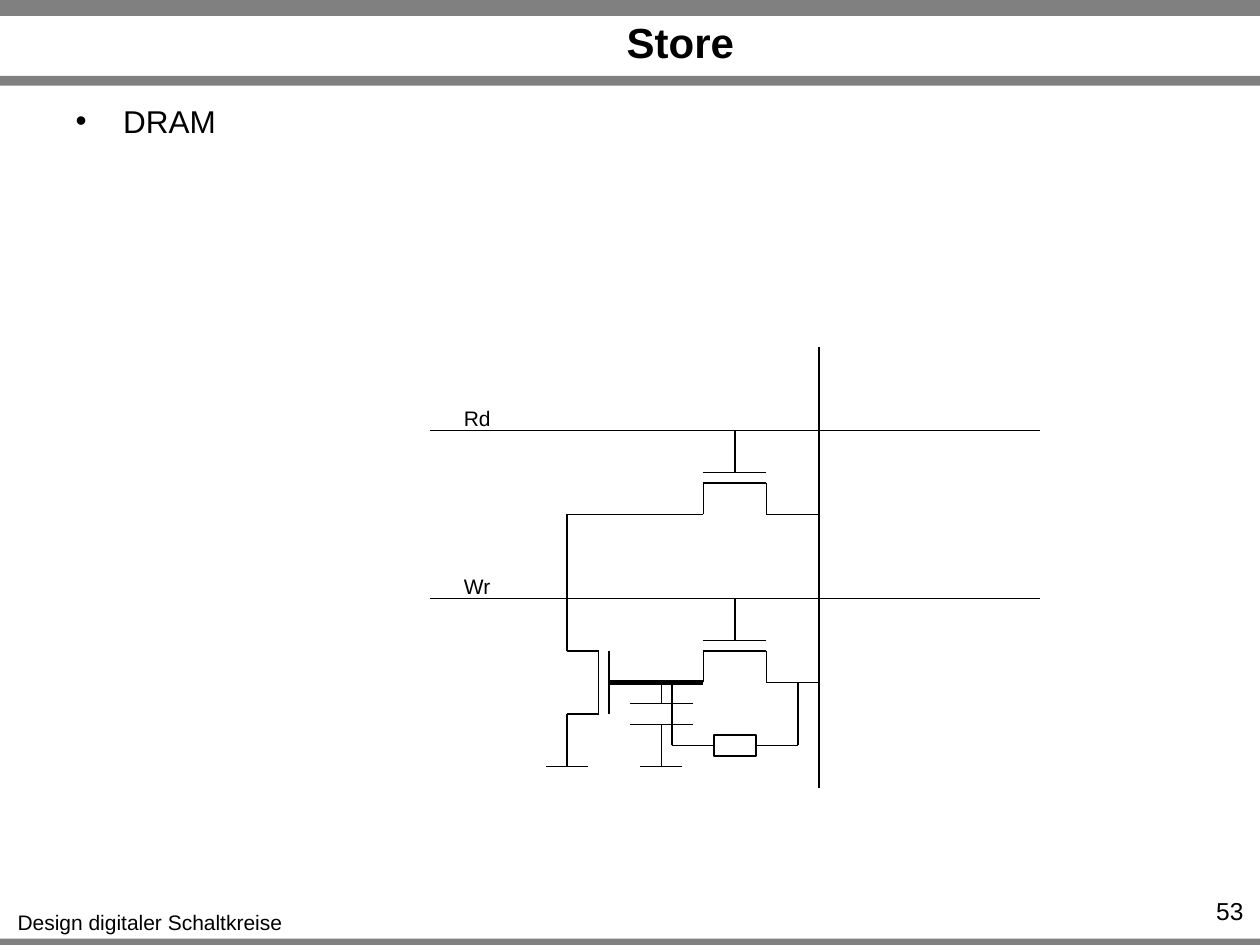
from dataclasses import dataclass

from lxml.etree import SubElement
from pptx import Presentation
from pptx.dml.color import RGBColor
from pptx.enum.shapes import MSO_CONNECTOR as Link, MSO_SHAPE as Preset
from pptx.enum.text import MSO_ANCHOR as Anchor, MSO_AUTO_SIZE as AutoSize, PP_ALIGN as Align
from pptx.oxml.ns import qn
from pptx.util import Cm, Pt


@dataclass(frozen=True)
class Theme:
    font: str = "Arial"
    ink: RGBColor = RGBColor(0, 0, 0)
    bar: RGBColor = RGBColor(0x80, 0x80, 0x80)
    title: int = 24
    body: int = 18
    number: int = 14
    label: int = 12
    wire: float = 0.75
    storage_wire: float = 3


THEME = Theme()


def grid(steps):
    """The circuit lies on a grid of twelve steps to the inch."""
    return Cm(steps * 2.54 / 12)


def place(shape, left, top, width, height):
    shape.left, shape.top = Cm(left), Cm(top)
    shape.width, shape.height = Cm(width), Cm(height)


def write(shape, text, size=THEME.label, bold=False, align=Align.LEFT,
          anchor=Anchor.TOP, wrap=True, bullet=None, indent=0):
    frame = shape.text_frame
    frame.auto_size = AutoSize.NONE
    frame.word_wrap = wrap
    frame.vertical_anchor = anchor
    paragraph = frame.paragraphs[0]
    paragraph.text = text
    paragraph.alignment = align
    paragraph.space_before = Pt(0)
    if bullet:
        properties = paragraph._p.get_or_add_pPr()
        properties.set("marL", str(Cm(indent)))
        properties.set("indent", str(-Cm(indent)))
        SubElement(properties, qn("a:buChar")).set("char", bullet)
    font = paragraph.font
    font.name, font.size, font.bold = THEME.font, Pt(size), bold
    font.color.rgb = THEME.ink


def add_text(slide, text, left, top, width, height, **style):
    box = slide.shapes.add_textbox(Cm(left), Cm(top), Cm(width), Cm(height))
    write(box, text, **style)


def add_bar(slide, top, height):
    bar = slide.shapes.add_shape(Preset.RECTANGLE, 0, Cm(top), Cm(25.4), Cm(height))
    bar.shadow.inherit = False
    bar.fill.solid()
    bar.fill.fore_color.rgb = THEME.bar
    bar.line.fill.background()


def add_wire(shapes, x1, y1, x2, y2, weight=THEME.wire):
    wire = shapes.add_connector(Link.STRAIGHT, grid(x1), grid(y1), grid(x2), grid(y2))
    wire.line.color.rgb = THEME.ink
    wire.line.width = Pt(weight)
    SubElement(wire._element.spPr, qn("a:effectLst"))
    return wire


def add_wires(shapes, *wires):
    for ends in wires:
        add_wire(shapes, *ends)


def add_access_transistor(slide, row):
    """Transistor between bit line and cell, gated by the word line at row."""
    channel, lead = row + 5, row + 8
    add_wires(slide.shapes.add_group_shape().shapes,
              (73, channel, 67, channel),
              (73, channel, 73, lead),
              (67, channel, 67, lead),
              (67, lead, 62, lead),
              (73, row + 4, 67, row + 4),
              (78, lead, 73, lead),
              (70, row + 4, 70, row))


def add_storage_transistor(slide):
    add_wires(slide.shapes.add_group_shape().shapes,
              (54, 57, 54, 62),
              (57, 62, 57, 68),
              (57, 62, 54, 62),
              (57, 68, 54, 68),
              (54, 68, 54, 73),
              (58, 62, 58, 68),
              (56, 73, 52, 73),
              (58, 65, 62, 65))


def add_capacitor(slide):
    add_wires(slide.shapes,
              (63, 65, 63, 67),
              (66, 67, 60, 67),
              (66, 69, 60, 69),
              (63, 69, 63, 73),
              (65, 73, 61, 73))


def add_resistor(slide):
    """Leakage resistor with its leads up to the storage node and bit line."""
    resistor = slide.shapes.add_shape(Preset.RECTANGLE, grid(68), grid(70), grid(4), grid(2))
    resistor.shadow.inherit = False
    resistor.fill.background()
    resistor.line.color.rgb = THEME.ink
    resistor.line.width = Pt(THEME.wire)
    for corner, edge, side in ((64, 68, 1), (76, 72, 3)):
        add_wire(slide.shapes, corner, 71, edge, 71).end_connect(resistor, side)
        add_wire(slide.shapes, corner, 71, corner, 65)


def main():
    deck = Presentation()
    deck.slide_width, deck.slide_height = Cm(25.4), Cm(19.05)
    slide = deck.slides.add_slide(deck.slide_layouts[1])

    # Frame and footer
    for top, height in ((18.92, 0.2), (0, 0.32), (1.53, 0.2)):
        add_bar(slide, top, height)
    add_text(slide, "Design digitaler Schaltkreise", 0.08, 18.21, 5.89, 0.76,
             align=Align.CENTER, wrap=False)
    add_text(slide, "53", 23.11, 17.93, 2.21, 0.61, size=THEME.number, align=Align.RIGHT)

    # Title and list
    title, topics = slide.placeholders
    place(title, 3.3, 0.36, 20.83, 0.97)
    write(title, "Store", size=THEME.title, bold=True, align=Align.CENTER,
          anchor=Anchor.MIDDLE)
    place(topics, 1.27, 1.93, 22.86, 1.68)
    write(topics, "DRAM", size=THEME.body, bullet="•", indent=0.96)

    # Word lines with their access transistors
    for name, row, label_top in (("Rd", 41, 8.05), ("Wr", 57, 11.43)):
        add_access_transistor(slide, row)
        add_wire(slide.shapes, 41, row, 99, row)
        add_text(slide, name, 9.09, label_top, 1.06, 0.76, align=Align.CENTER, wrap=False)

    # Storage cell
    add_storage_transistor(slide)
    add_wires(slide.shapes, (54, 49, 54, 58), (62, 49, 54, 49))
    add_capacitor(slide)
    add_wire(slide.shapes, 58, 65, 67, 65, weight=THEME.storage_wire)

    # Bit line and leakage path
    add_wire(slide.shapes, 78, 33, 78, 75)
    add_resistor(slide)

    deck.save("out.pptx")


if __name__ == "__main__":
    main()
